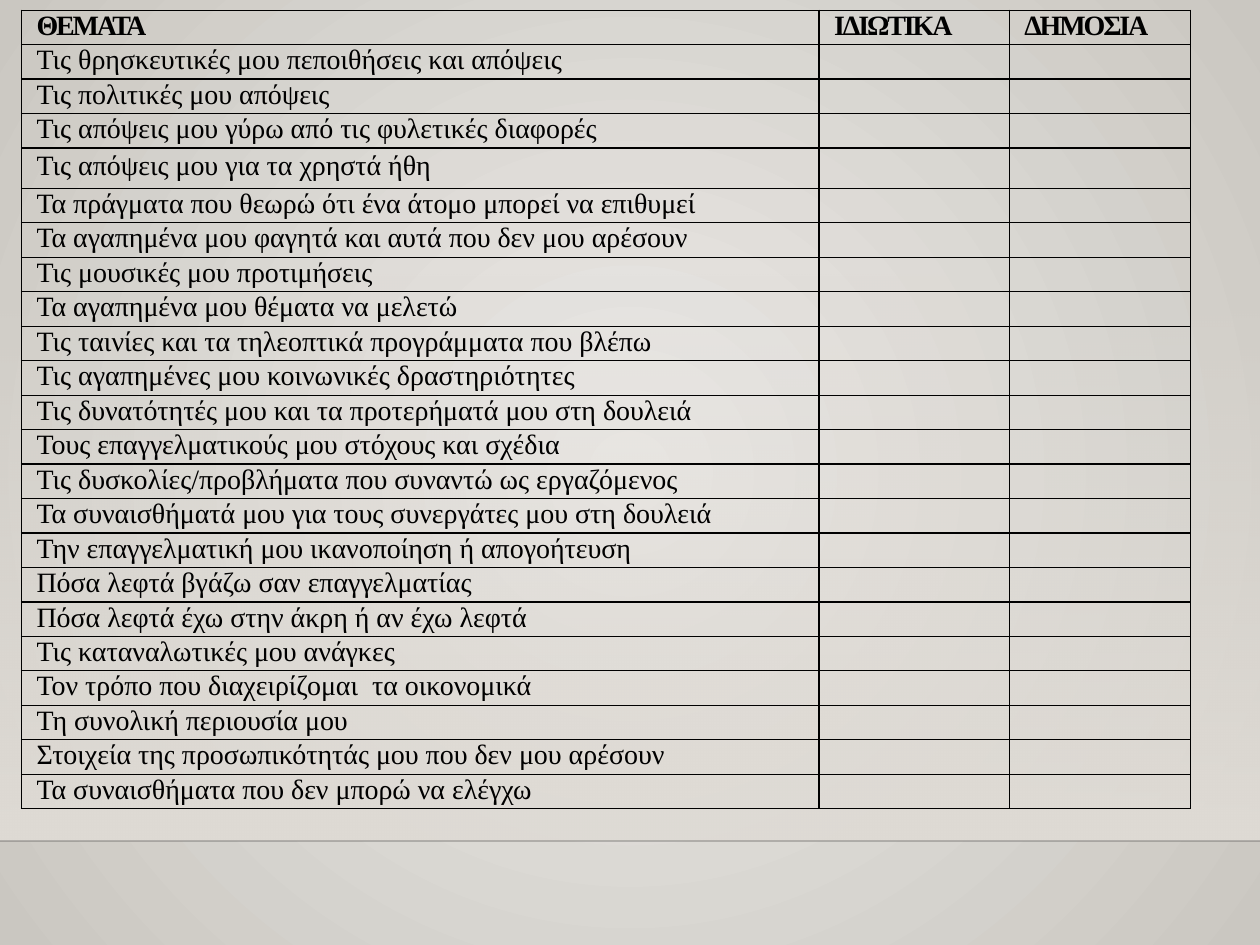
from lxml.etree import SubElement
from pptx import Presentation
from pptx.dml.color import RGBColor
from pptx.enum.shapes import MSO_CONNECTOR, MSO_SHAPE
from pptx.oxml import parse_xml
from pptx.oxml.ns import nsdecls, qn
from pptx.util import Inches, Pt

HEADINGS = ["ΘΕΜΑΤΑ", "ΙΔΙΩΤΙΚΑ", "ΔΗΜΟΣΙΑ"]
TOPICS = [
    "Τις θρησκευτικές μου πεποιθήσεις και απόψεις",
    "Τις πολιτικές μου απόψεις",
    "Τις απόψεις μου γύρω από τις φυλετικές διαφορές",
    "Τις απόψεις μου για τα χρηστά ήθη",
    "Τα πράγματα που θεωρώ ότι ένα άτομο μπορεί να επιθυμεί",
    "Τα αγαπημένα μου φαγητά και αυτά που δεν μου αρέσουν",
    "Τις μουσικές μου προτιμήσεις",
    "Τα αγαπημένα μου θέματα να μελετώ",
    "Τις ταινίες και τα τηλεοπτικά προγράμματα που βλέπω",
    "Τις αγαπημένες μου κοινωνικές δραστηριότητες",
    "Τις δυνατότητές μου και τα προτερήματά μου στη δουλειά",
    "Τους επαγγελματικούς μου στόχους και σχέδια",
    "Τις δυσκολίες/προβλήματα που συναντώ ως εργαζόμενος",
    "Τα συναισθήματά μου για τους συνεργάτες μου στη δουλειά",
    "Την επαγγελματική μου ικανοποίηση ή απογοήτευση",
    "Πόσα λεφτά βγάζω σαν επαγγελματίας",
    "Πόσα λεφτά έχω στην άκρη ή αν έχω λεφτά",
    "Τις καταναλωτικές μου ανάγκες",
    "Τον τρόπο που διαχειρίζομαι  τα οικονομικά",
    "Τη συνολική περιουσία μου",
    "Στοιχεία της προσωπικότητάς μου που δεν μου αρέσουν",
    "Τα συναισθήματα που δεν μπορώ να ελέγχω",
]
COLUMN_WIDTHS = [6.33, 1.51, 1.44]
TABLE_HEIGHT = 6.34
TALL_ROW, TALL_HEIGHT = 4, 0.32
THICK_RULE = 19  # the heavier rule lies below this row


def color(hex_string):
    return RGBColor.from_string(hex_string)


def add_border(cell, side, width):
    cell._tc.get_or_add_tcPr().append(parse_xml(
        f'<a:ln{side} {nsdecls("a")} w="{Pt(width)}"><a:solidFill>'
        f'<a:srgbClr val="000000"/></a:solidFill></a:ln{side}>'))


deck = Presentation()
deck.slide_width, deck.slide_height = Inches(10), Inches(7.5)
page = deck.slides.add_slide(deck.slide_layouts[6])
width, height = deck.slide_width, deck.slide_height

# Radial background, lighter in the middle
backdrop = page.background.fill
backdrop.gradient()
for stop, shade in zip(backdrop.gradient_stops, ["ECEAE7", "CAC7C1"]):
    stop.color.rgb = color(shade)
gradient = page.element.find(".//" + qn("a:gradFill"))
gradient.replace(gradient.find(qn("a:lin")), parse_xml(
    f'<a:path {nsdecls("a")} path="circle">'
    '<a:fillToRect l="50000" t="50000" r="50000" b="50000"/></a:path>'))

# Wall that fades in towards the floor line
floor = int(height * 0.89)
wall_top = int(height * 0.29)
wall = page.shapes.add_shape(MSO_SHAPE.RECTANGLE, 0, wall_top, width, floor - wall_top)
wall.shadow.inherit = False
wall.line.fill.background()
wall.fill.gradient()
wall.fill.gradient_angle = 270
for stop in wall.fill.gradient_stops:
    stop.color.rgb = color("DFDBD5")
clear_stop = wall.element.find(".//" + qn("a:srgbClr"))
SubElement(clear_stop, qn("a:alpha"), val="0")

# Floor line
floor_line = page.shapes.add_connector(MSO_CONNECTOR.STRAIGHT, 0, floor, width, floor)
floor_line.line.width = Pt(1)
floor_line.line.color.rgb = color("000001")
line_color = floor_line.element.find(".//" + qn("a:srgbClr"))
SubElement(line_color, qn("a:alpha"), val="20000")
SubElement(floor_line.element.spPr, qn("a:effectLst"))

# Table grid
rows = [HEADINGS] + [[topic, "", ""] for topic in TOPICS]
frame = page.shapes.add_table(
    len(rows), len(HEADINGS), Inches(0.17), Inches(0.08),
    Inches(sum(COLUMN_WIDTHS)), Inches(TABLE_HEIGHT))
table = frame.table
table.first_row = table.horz_banding = False
for column, column_width in zip(table.columns, COLUMN_WIDTHS):
    column.width = Inches(column_width)
row_height = (TABLE_HEIGHT - TALL_HEIGHT) / (len(rows) - 1)
for index, row in enumerate(table.rows):
    row.height = Inches(TALL_HEIGHT if index == TALL_ROW else row_height)

# Cells
for row_index, texts in enumerate(rows):
    for column_index, text in enumerate(texts):
        cell = table.cell(row_index, column_index)
        cell.margin_left = cell.margin_right = cell.margin_top = cell.margin_bottom = 0
        add_border(cell, "L", 0.75)
        add_border(cell, "R", 0.75)
        add_border(cell, "T", 1 if row_index == THICK_RULE + 1 else 0.75)
        add_border(cell, "B", 1 if row_index == THICK_RULE else 0.75)
        cell.fill.background()

        para = cell.text_frame.paragraphs[0]
        if not text:  # a small font keeps empty cells from stretching the row
            SubElement(para._p, qn("a:endParaRPr"), sz="1200")
            continue
        para.text = text
        para.line_spacing = Pt(19.2 if row_index == TALL_ROW else 17.8)
        para._p.get_or_add_pPr().set("marL", str(Inches(0.12)))
        for span in para.runs:
            span.font.name = "Times New Roman"
            span.font.size = Pt(16)
            span.font.color.rgb = color("000000")
            span.font.bold = row_index == 0
            if row_index == 0:
                span.font._element.set("spc", "-120")

deck.save("out.pptx")
